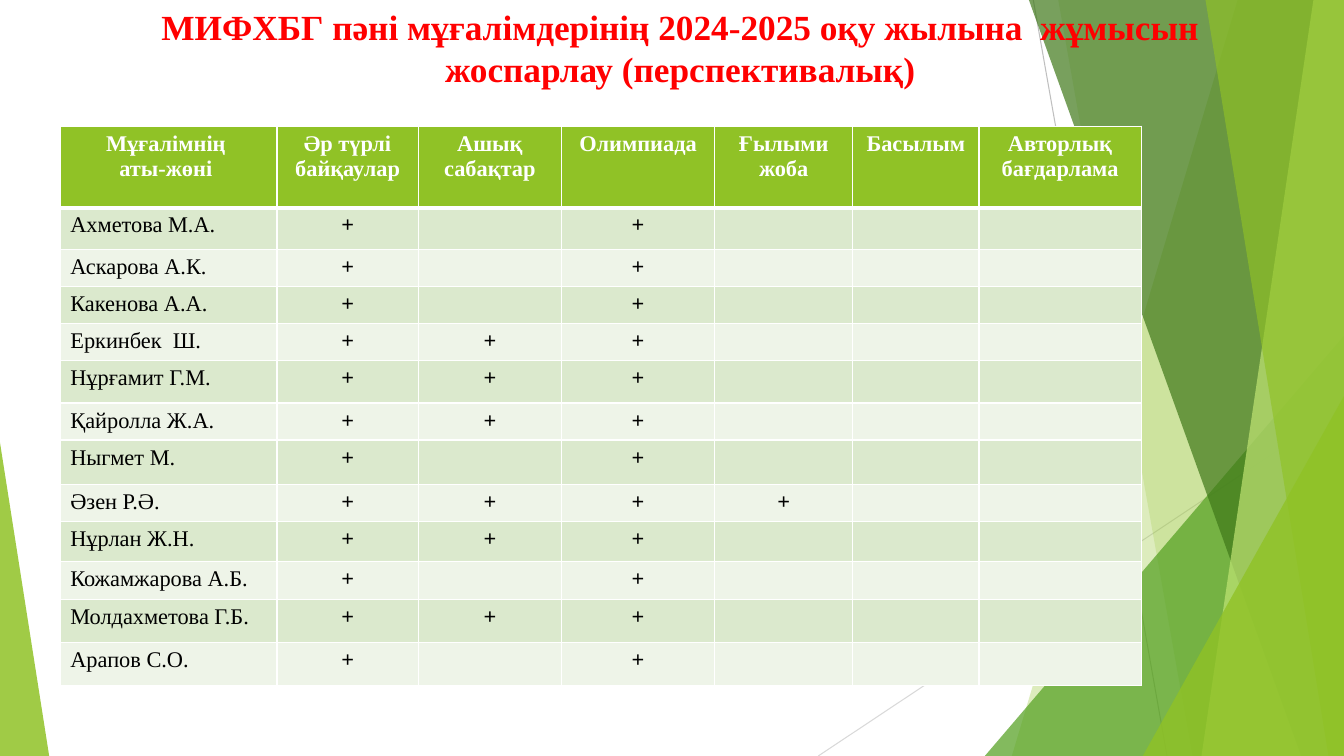
"""Build the slide with the teachers' long-term work plan for 2024-2025."""
from lxml.etree import SubElement
from pptx import Presentation
from pptx.dml.color import RGBColor
from pptx.enum.shapes import MSO_CONNECTOR, MSO_SHAPE
from pptx.enum.text import MSO_ANCHOR, PP_ALIGN
from pptx.oxml.ns import qn
from pptx.util import Cm, Pt

WHITE = RGBColor(0xFF, 0xFF, 0xFF)
BLACK = RGBColor(0x00, 0x00, 0x00)
RED = RGBColor(0xFF, 0x00, 0x00)
LIME = RGBColor(0x90, 0xC2, 0x26)
PALE_LIME = RGBColor(0xC0, 0xE4, 0x74)
GREEN = RGBColor(0x54, 0xA0, 0x21)
DARK_GREEN = RGBColor(0x3F, 0x78, 0x19)
BAND_DARK = RGBColor(0xDB, 0xE9, 0xCD)
BAND_LIGHT = RGBColor(0xEE, 0xF4, 0xE8)
GREY = RGBColor(0xBF, 0xBF, 0xBF)
LIGHT_GREY = RGBColor(0xD9, 0xD9, 0xD9)
FONT = "Times New Roman"
WIDTH, HEIGHT = 33.87, 19.05


def write(p, text, color, **formats):
    r = p.add_run()
    r.text = text
    r.font.color.rgb = color
    for name, value in {"name": FONT, **formats}.items():
        setattr(r.font, name, value)


def paint(sp, color, opacity):
    sp.shadow.inherit = False
    sp.line.fill.background()
    sp.fill.solid()
    sp.fill.fore_color.rgb = color
    clr = sp.fill._xPr.find(qn("a:solidFill"))[0]
    SubElement(clr, qn("a:alpha")).set("val", str(opacity * 1000))


prs = Presentation()
prs.slide_width, prs.slide_height = Cm(WIDTH), Cm(HEIGHT)
s = prs.slides.add_slide(prs.slide_layouts[6])

for x1, y1, x2, color in [(26.04, 0, 29.41, GREY), (WIDTH, 10.24, 20.62, LIGHT_GREY)]:
    line = s.shapes.add_connector(MSO_CONNECTOR.STRAIGHT, Cm(x1), Cm(y1), Cm(x2), Cm(HEIGHT))
    line.line.color.rgb = color
    line.line.width = Pt(0.75)
    SubElement(line._element.spPr, qn("a:effectLst"))

facets = [
    ("band", (31.19, 25.5), LIME, 30),
    ("band", (26.67, 30.05), LIME, 20),
    ("triangle", (24.82, 8.46, 9.05, 1), GREEN, 72),
    ("band", (25.93, 32.79), DARK_GREEN, 70),
    ("band", (33.1, 30.28), PALE_LIME, 70),
    ("band", (30.38, 33.48), LIME, 65),
    ("triangle", (28.8, 9.98, 5.07, 1), LIME, 80),
    ("triangle", (0, 11.15, 1.24, 0), LIME, 85),
]
for kind, place, color, opacity in facets:
    if kind == "band":
        top_x, bottom_x = place
        outline = s.shapes.build_freeform(Cm(top_x), 0)
        corners = [(WIDTH, 0), (WIDTH, HEIGHT), (bottom_x, HEIGHT)]
        outline.add_line_segments([(Cm(x), Cm(y)) for x, y in corners])
        sp = outline.convert_to_shape()
    else:
        left, top, width, apex = place
        sp = s.shapes.add_shape(MSO_SHAPE.ISOSCELES_TRIANGLE, Cm(left), Cm(top),
                                Cm(width), Cm(HEIGHT - top))
        sp.adjustments[0] = apex
    paint(sp, color, opacity)

title = s.shapes.add_textbox(Cm(2.54), 0, Cm(29.21), Cm(1.73))
tf = title.text_frame
tf.word_wrap = True
tf.vertical_anchor = MSO_ANCHOR.TOP
p = tf.paragraphs[0]
p.alignment = PP_ALIGN.CENTER
write(p, "МИФХБГ пәні мұғалімдерінің 2024-2025 оқу жылына  жұмысын жоспарлау (перспективалық)",
      RED, size=Pt(25.2), bold=True)

headers = ["Мұғалімнің \nаты-жөні ", "Әр түрлі байқаулар", "Ашық сабақтар", "Олимпиада",
           "Ғылыми жоба", "Басылым", "Авторлық бағдарлама"]
plans = [
    ("Ахметова М.А.", "+ +", 1.04),
    ("Аскарова А.К.", "+ +", 0.89),
    ("Какенова А.А.", "+ +", 0.89),
    ("Еркинбек  Ш.", "+++", 0.89),
    ("Нұрғамит Г.М.", "+++", 1.08),
    ("Қайролла Ж.А.", "+++", 0.89),
    ("Ныгмет М.", "+ +", 1.12),
    ("Әзен Р.Ә.", "++++", 0.89),
    ("Нұрлан Ж.Н.", "+++", 1),
    ("Кожамжарова А.Б.", "+ +", 0.97),
    ("Молдахметова Г.Б.", "+++", 1.08),
    ("Арапов С.О.", "+ +", 1.08),
]
col_widths = [5.46, 3.56, 3.61, 3.86, 3.48, 3.18, 4.09]
row_heights = [2.06] + [height for _, _, height in plans]
rows = [headers] + [[name, *marks.ljust(6)] for name, marks, _ in plans]

frame = s.shapes.add_table(len(rows), len(headers), Cm(1.52), Cm(3.18),
                           Cm(sum(col_widths)), Cm(sum(row_heights)))
table = frame.table
for column, width in zip(table.columns, col_widths):
    column.width = Cm(width)
for i, (row, height) in enumerate(zip(rows, row_heights)):
    table.rows[i].height = Cm(height)
    for j, text in enumerate(row):
        cell = table.cell(i, j)
        tcPr = cell._tc.get_or_add_tcPr()
        for side in "LRTB":
            thick = (i, side) in [(0, "B"), (1, "T")]
            ln = SubElement(tcPr, qn(f"a:ln{side}"), w=str(Pt(3 if thick else 1)))
            fill = SubElement(ln, qn("a:solidFill"))
            SubElement(fill, qn("a:srgbClr"), val=str(WHITE))
        cell.fill.solid()
        cell.fill.fore_color.rgb = LIME if i == 0 else BAND_DARK if i % 2 else BAND_LIGHT
        tf = cell.text_frame
        for k, part in enumerate(text.split("\n")):
            p = tf.add_paragraph() if k else tf.paragraphs[0]
            if part == " ":
                SubElement(p._p, qn("a:endParaRPr"), sz="1600")
                continue
            is_name = i > 0 and j == 0
            p.alignment = PP_ALIGN.LEFT if is_name else PP_ALIGN.CENTER
            write(p, part, BLACK if i else WHITE, size=Pt(16), bold=not is_name)

prs.save("out.pptx")
